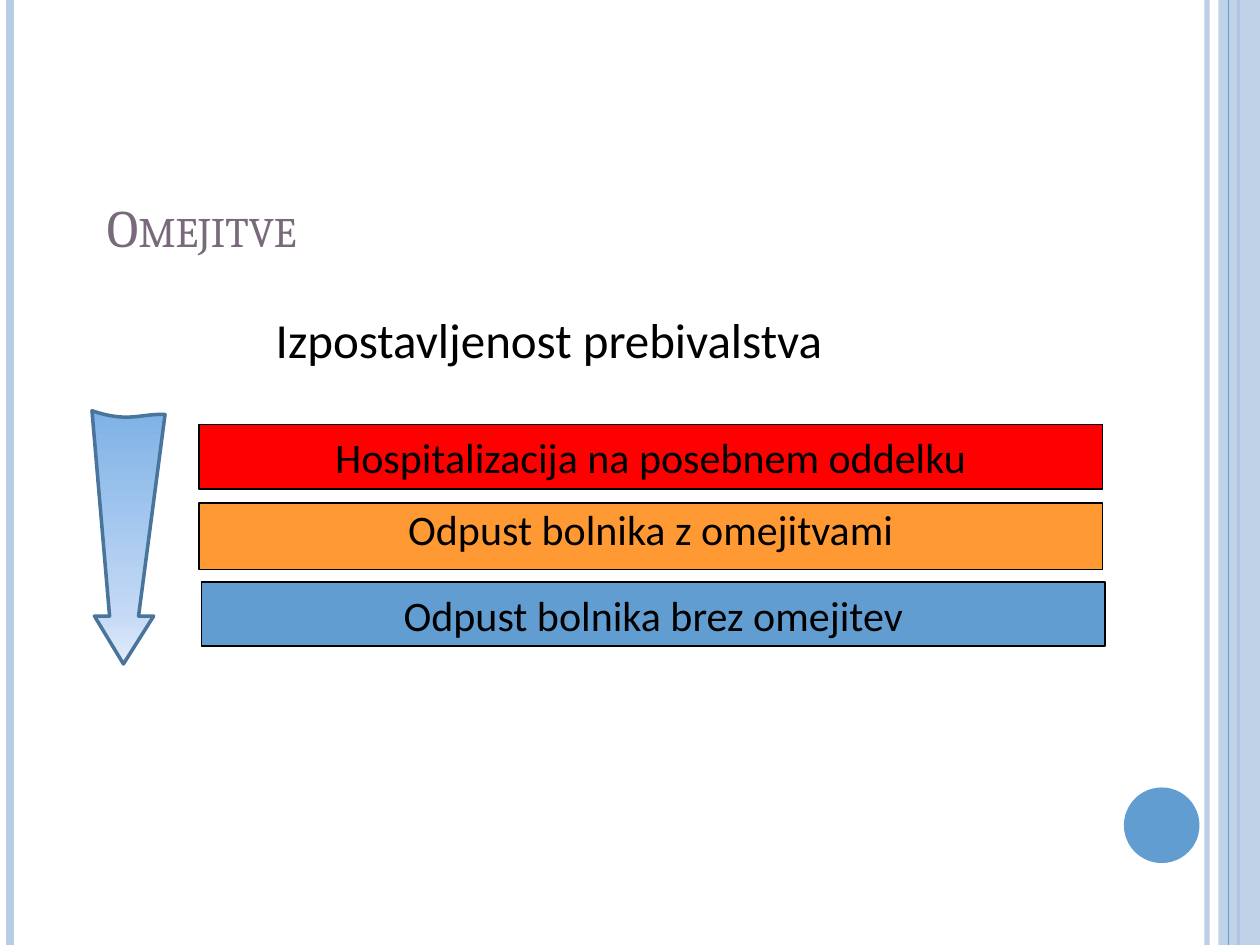
"""Build the slide on discharge restrictions and public exposure."""
from pptx import Presentation
from pptx.dml.color import RGBColor
from pptx.enum import shapes, text
from pptx.oxml import parse_xml
from pptx.oxml.ns import nsdecls, qn
from pptx.util import Inches, Pt
from lxml import etree

BLACK = RGBColor(0x00, 0x00, 0x00)
PLUM = RGBColor(0x78, 0x69, 0x7B)
PALE = RGBColor(0xB7, 0xCC, 0xE5)
BLUE = RGBColor(0x62, 0x9D, 0xD1)
STEEL = RGBColor(0x49, 0x74, 0x9B)
RED = RGBColor(0xFF, 0x00, 0x00)
ORANGE = RGBColor(0xFF, 0x99, 0x33)

TITLE = ("Omejitve", (0.75, 0.84, 8.5, 1.26), 30, "Cambria", PLUM)
SUBTITLE = ("Izpostavljenost prebivalstva", (2.09, 2.41, 5.83, 0.57), 28, "Calibri", BLACK)
LEVELS = [
    ("Hospitalizacija na posebnem oddelku", (1.58, 3.37, 7.17, 0.51), RED, text.MSO_ANCHOR.MIDDLE, 1),
    ("Odpust bolnika z omejitvami", (1.58, 3.99, 7.17, 0.53), ORANGE, text.MSO_ANCHOR.TOP, 0.9),
    ("Odpust bolnika brez omejitev", (1.6, 4.62, 7.17, 0.51), BLUE, text.MSO_ANCHOR.MIDDLE, 1),
]
LEFT_RULES = [(9.58, PALE, 3, 93), (0.08, PALE, 4.5, 100), (9.83, BLUE, 1.5, 100)]
BAND_RULE = (9.75, BLUE, 0.75, 100)
ARROW_TOP = [(0.73, 3.26), (1.02, 3.36), (1.12, 3.28), (1.31, 3.29)]
ARROW_HEAD = [(1.1, 4.89), (1.22, 4.89), (0.98, 5.27), (0.75, 4.89), (0.87, 4.89)]
ARROW_STOPS = [(0, "7EB2E6"), (80, "C4D9F5"), (100, "E2ECFA")]
CURVE_STEPS = 16


def set_alpha(shape, percent):
    color = shape._element.spPr.find(".//" + qn("a:srgbClr"))
    etree.SubElement(color, qn("a:alpha")).set("val", str(percent * 1000))


def add_rule(page, x, color, width, opacity):
    rule = page.shapes.add_connector(
        shapes.MSO_CONNECTOR.STRAIGHT, Inches(x), 0, Inches(x), Inches(7.5))
    rule.line.color.rgb = color
    rule.line.width = Pt(width)
    if opacity < 100:
        set_alpha(rule, opacity)
    etree.SubElement(rule._element.spPr, qn("a:effectLst"))


def add_block(page, kind, place, color):
    block = page.shapes.add_shape(kind, *map(Inches, place))
    block.shadow.inherit = False
    block.fill.solid()
    block.fill.fore_color.rgb = color
    block.line.fill.background()
    return block


def write(shape, words, size, font, color, anchor):
    frame = shape.text_frame
    frame.word_wrap = True
    frame.vertical_anchor = anchor
    para = frame.paragraphs[0]
    para.text = words
    para.font.size = Pt(size)
    para.font.name = font
    para.font.color.rgb = color
    return para


def add_label(page, words, place, size, font, color, anchor):
    box = page.shapes.add_textbox(*map(Inches, place))
    return write(box, words, size, font, color, anchor)


def add_level(page, words, place, color, anchor, spacing):
    block = add_block(page, shapes.MSO_SHAPE.RECTANGLE, place, color)
    block.line.color.rgb = BLACK
    block.line.width = Pt(1)
    para = write(block, words, 24, "Calibri", BLACK, anchor)
    para.alignment = text.PP_ALIGN.CENTER
    para.line_spacing = spacing


def curve_point(t):
    weights = ((1 - t) ** 3, 3 * t * (1 - t) ** 2, 3 * t ** 2 * (1 - t), t ** 3)
    return tuple(sum(w * p[axis] for w, p in zip(weights, ARROW_TOP)) for axis in (0, 1))


def add_arrow(page):
    curve = [curve_point(step / CURVE_STEPS) for step in range(CURVE_STEPS + 1)]
    points = [(Inches(x), Inches(y)) for x, y in curve + ARROW_HEAD]
    builder = page.shapes.build_freeform(*points[0])
    builder.add_line_segments(points[1:], close=True)
    arrow = builder.convert_to_shape()
    arrow.shadow.inherit = False
    arrow.line.color.rgb = STEEL
    arrow.line.width = Pt(2)
    stops = "".join(
        f'<a:gs pos="{position * 1000}"><a:srgbClr val="{color}"/></a:gs>'
        for position, color in ARROW_STOPS)
    gradient = parse_xml(
        f'<a:gradFill {nsdecls("a")} rotWithShape="1"><a:gsLst>{stops}</a:gsLst>'
        '<a:lin ang="5400000" scaled="0"/></a:gradFill>')
    arrow._element.spPr.find(qn("a:custGeom")).addnext(gradient)


def main():
    deck = Presentation()
    deck.slide_width, deck.slide_height = Inches(10), Inches(7.5)
    page = deck.slides.add_slide(deck.slide_layouts[6])
    for rule in LEFT_RULES:
        add_rule(page, *rule)
    band = add_block(page, shapes.MSO_SHAPE.RECTANGLE, (9.67, 0, 0.33, 7.5), PALE)
    set_alpha(band, 87)
    add_rule(page, *BAND_RULE)
    add_block(page, shapes.MSO_SHAPE.OVAL, (8.92, 6.25, 0.6, 0.6), BLUE)
    title = add_label(page, *TITLE, text.MSO_ANCHOR.BOTTOM)
    title._p.find(".//" + qn("a:defRPr")).set("cap", "small")
    for level in LEVELS:
        add_level(page, *level)
    add_label(page, *SUBTITLE, text.MSO_ANCHOR.TOP)
    add_arrow(page)
    deck.save("out.pptx")


if __name__ == "__main__":
    main()
